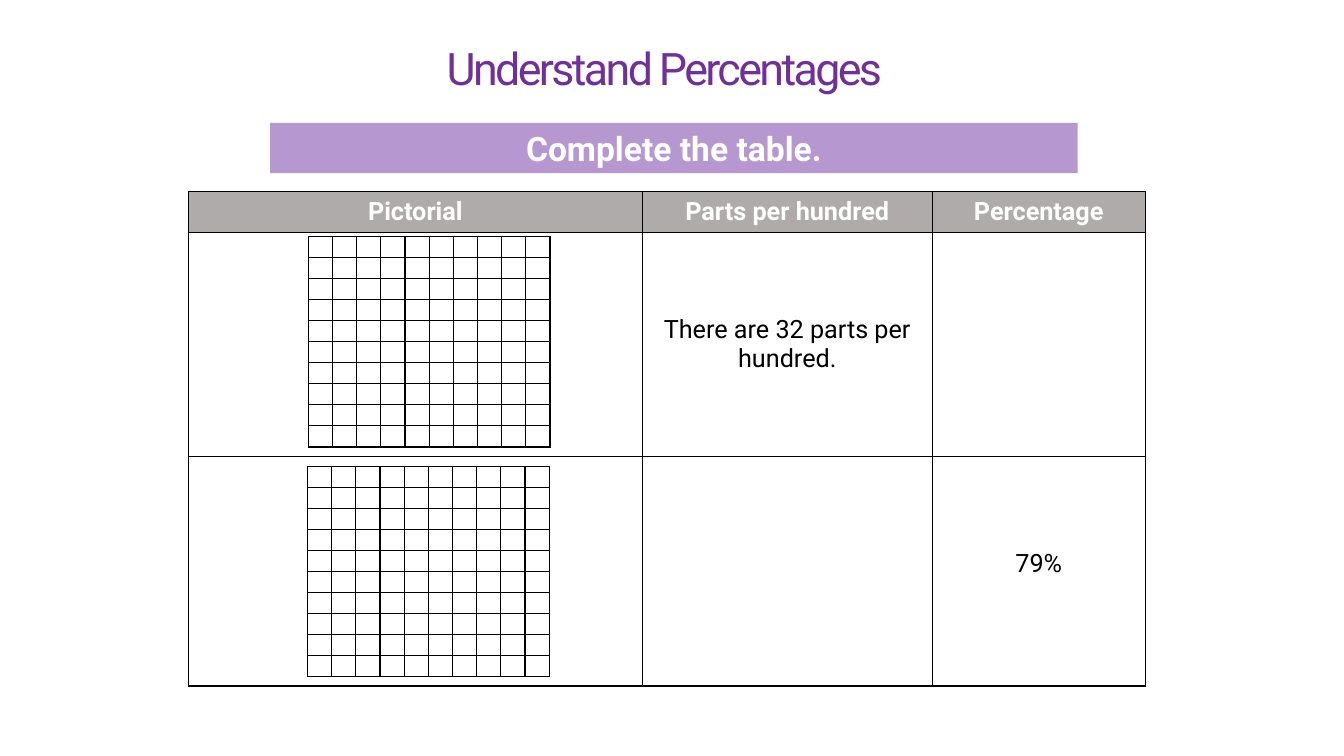
import lxml.etree
import pptx
import pptx.dml.color
import pptx.enum.shapes
import pptx.enum.text
import pptx.oxml.ns
import pptx.util

Pt = pptx.util.Pt
RGBColor = pptx.dml.color.RGBColor
Align = pptx.enum.text.PP_ALIGN
Anchor = pptx.enum.text.MSO_ANCHOR
qn = pptx.oxml.ns.qn

TITLE_PURPLE = RGBColor(0x70, 0x30, 0x96)
BANNER_PURPLE = RGBColor(0x70, 0x30, 0xA0)
HEADER_GREY = RGBColor(0xAF, 0xAB, 0xAB)
WHITE = RGBColor(0xFF, 0xFF, 0xFF)
BLACK = RGBColor(0, 0, 0)


class Worksheet:
    """The slide being built and its style."""
    font = "Roboto"
    border_width = 1

    def __init__(self, deck):
        self.slide = deck.slides.add_slide(deck.slide_layouts[5])

    def run(self, paragraph, text, size, color, bold=False):
        run = paragraph.add_run()
        run.text = text
        run.font.name = self.font
        run.font.size = Pt(size)
        run.font.bold = bold
        run.font.color.rgb = color
        return run

    def title(self, text, box, size, color, tracking):
        heading = self.slide.shapes.title
        heading.left, heading.top, heading.width, heading.height = map(Pt, box)
        frame = heading.text_frame
        frame.word_wrap = False
        frame.auto_size = pptx.enum.text.MSO_AUTO_SIZE.NONE
        frame.vertical_anchor = Anchor.MIDDLE
        frame.paragraphs[0].alignment = Align.LEFT
        run = self.run(frame.paragraphs[0], text, size, color)
        run.font._element.set("spc", str(round(tracking * 100)))

    def banner(self, text, box, size, color, opacity):
        bar = self.slide.shapes.add_shape(
            pptx.enum.shapes.MSO_SHAPE.RECTANGLE, *map(Pt, box))
        bar.shadow.inherit = False
        bar.line.fill.background()
        bar.fill.solid()
        bar.fill.fore_color.rgb = color
        tint = bar._element.spPr.find(".//" + qn("a:srgbClr"))
        lxml.etree.SubElement(tint, qn("a:alpha"), val=str(opacity * 1000))
        frame = bar.text_frame
        frame.word_wrap = True
        frame.vertical_anchor = Anchor.MIDDLE
        paragraph = frame.paragraphs[0]
        paragraph.alignment = Align.CENTER
        paragraph.line_spacing = Pt(28.8)
        paragraph.space_before = Pt(1)
        self.run(paragraph, text, size, WHITE, bold=True)

    def table(self, left, top, widths, heights):
        table = self.slide.shapes.add_table(
            len(heights), len(widths), Pt(left), Pt(top),
            Pt(sum(widths)), Pt(sum(heights))).table
        table.first_row = table.horz_banding = False
        for column, width in zip(table.columns, widths):
            column.width = Pt(width)
        for row, height in zip(table.rows, heights):
            row.height = Pt(height)
        for cell in table.iter_cells():
            self.borders(cell)
            cell.fill.background()
        return table

    def borders(self, cell):
        properties = cell._tc.get_or_add_tcPr()
        for side in ("a:lnL", "a:lnR", "a:lnT", "a:lnB"):
            line = lxml.etree.SubElement(
                properties, qn(side), w=str(Pt(self.border_width)))
            fill = lxml.etree.SubElement(line, qn("a:solidFill"))
            lxml.etree.SubElement(fill, qn("a:srgbClr"), val=str(BLACK))

    def text_table(self, rows, left, top, widths, heights, size):
        table = self.table(left, top, widths, heights)
        for r, row in enumerate(rows):
            for c, text in enumerate(row):
                cell = table.cell(r, c)
                cell.vertical_anchor = Anchor.MIDDLE
                is_header = r == 0
                if is_header:
                    cell.fill.solid()
                    cell.fill.fore_color.rgb = HEADER_GREY
                if text:
                    paragraph = cell.text_frame.paragraphs[0]
                    paragraph.alignment = Align.CENTER
                    self.run(paragraph, text, size,
                             WHITE if is_header else BLACK, is_header)
        return table

    def hundred_square(self, left, top, cell_width, cell_height):
        square = self.table(left, top, [cell_width] * 10, [cell_height] * 10)
        for cell in square.iter_cells():
            cell.fill.solid()
            cell.fill.fore_color.rgb = WHITE
            cell.margin_left = cell.margin_right = 0
            cell.margin_top = cell.margin_bottom = 0
            # Small empty text keeps the rows at their set height
            paragraph = cell.text_frame.paragraphs[0]._p
            lxml.etree.SubElement(paragraph, qn("a:endParaRPr"), sz="800")


def main():
    deck = pptx.Presentation()
    deck.slide_width, deck.slide_height = Pt(960), Pt(540)
    sheet = Worksheet(deck)

    # Heading
    sheet.title("Understand Percentages", (311.8, 25.2, 329, 46), 32,
                TITLE_PURPLE, tracking=-1.9)

    # Exercise table
    exercise = sheet.text_table(
        [["Pictorial", "Parts per hundred", "Percentage"],
         ["", "There are 32 parts per hundred.", ""],
         ["", "", "79%"]],
        134.6, 136.8, [324.2, 207.2, 152], [29.2, 160, 164], 18)
    exercise.cell(2, 2).margin_bottom = Pt(14.4)

    # Instruction
    sheet.banner("Complete the table.", (193, 87.8, 576.7, 36), 24,
                 BANNER_PURPLE, opacity=50)

    # Hundred squares to shade in
    for left, top in ((219.6, 333.2), (220.2, 169)):
        sheet.hundred_square(left, top, 17.28, 15.05)

    deck.save("out.pptx")


if __name__ == "__main__":
    main()
